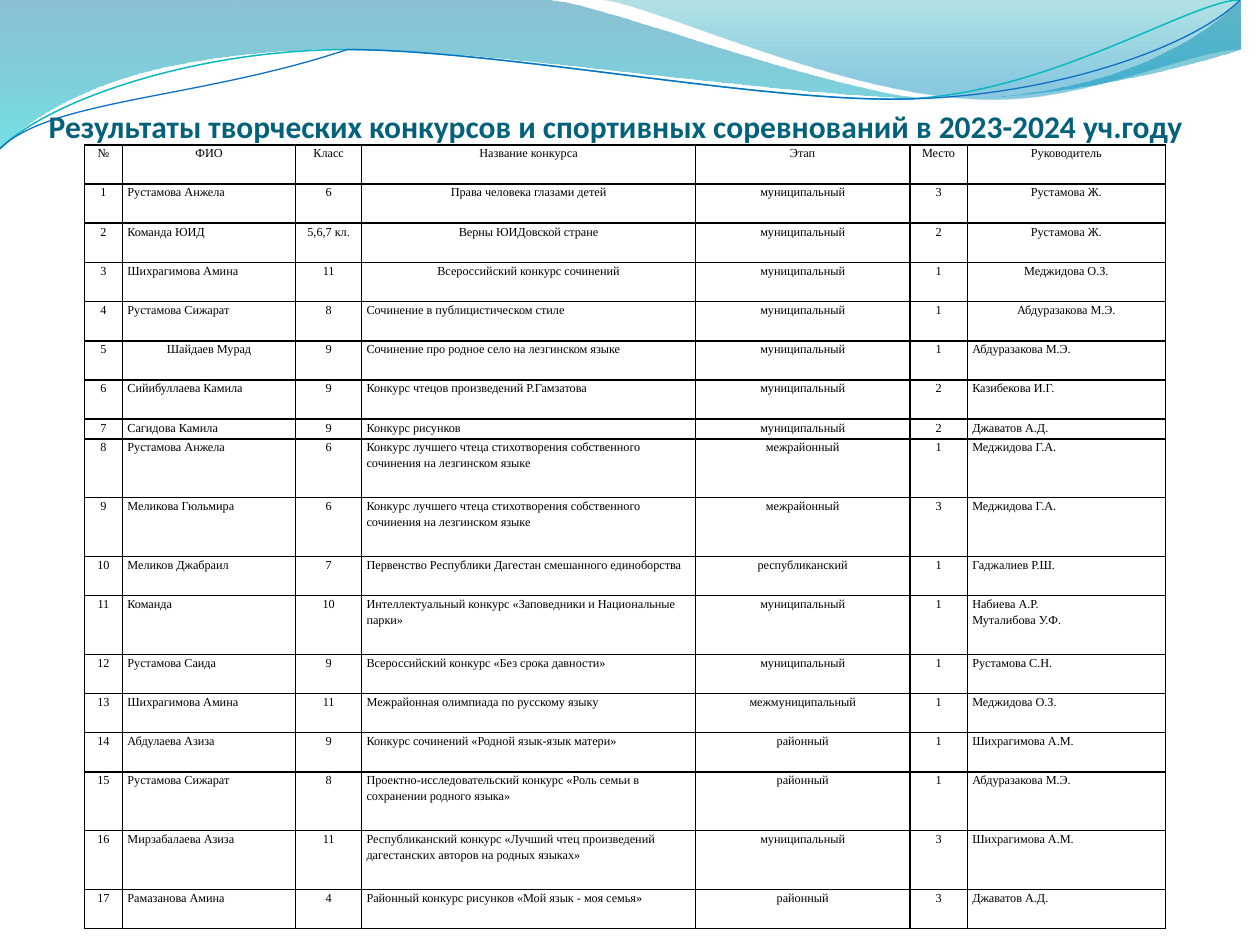
from dataclasses import dataclass
from typing import Any, NamedTuple

from lxml import etree
from pptx import Presentation
from pptx.dml.color import RGBColor
from pptx.enum.text import MSO_ANCHOR, PP_ALIGN
from pptx.oxml.ns import qn
from pptx.util import Cm, Pt

CENTER, LEFT = PP_ALIGN.CENTER, PP_ALIGN.LEFT
TOP, BOTTOM = MSO_ANCHOR.TOP, MSO_ANCHOR.BOTTOM


@dataclass(frozen=True)
class Theme:
    title_color: str = "04617B"
    text_color: str = "000000"
    upper_line: str = "0AB8BF"
    lower_line: str = "0F6FC6"
    title_font: str = "Calibri"
    table_font: str = "Times New Roman"
    title_size: float = 18
    table_size: float = 7
    border_width: float = 1


class Stop(NamedTuple):
    position: float
    color: str
    opacity: int


class Wave(NamedTuple):
    start: tuple
    segments: list
    stops: tuple = ()
    line_color: str = ""
    line_width: float = 0


class Result(NamedTuple):
    name: str
    grade: str
    contest: str
    stage: str
    place: str
    leader: str
    height: int = 2


THEME = Theme()
WAVES = [
    Wave((0, 0), [
        [(11.18, 0)],
        [(12.09, 0.43), (16.87, 1.6), (19.25, 1.6)],
        [(21.67, 1.6), (24.33, 0.66), (25.4, 0.23)],
        [(25.4, 0.91)],
        [(24.97, 1.12), (22.1, 1.93), (18.95, 1.91)],
        [(15.8, 1.91), (9.7, 0.71), (6.53, 0.86)],
        [(3.28, 0.91), (1.17, 2.11), (0, 2.87)],
    ], stops=(Stop(0, "0074A1", 45), Stop(1, "00C6CF", 55))),
    Wave((12.17, 0), [
        [(12.93, 0.28), (17.32, 1.57), (19.53, 1.65)],
        [(21.74, 1.75), (24.41, 0.81), (25.4, 0.53)],
        [(25.4, 0)],
    ], stops=(Stop(0, "00A1A9", 30), Stop(0.8, "008BBF", 45))),
    Wave((0, 2.82), [
        [(1.22, 2.36), (4.01, 1.45), (7.04, 1.32)],
        [(10.03, 1.19), (15.06, 2.26), (18.11, 2.03)],
        [(21.16, 1.8), (23.83, 0.38), (25.35, -0.05)],
    ], line_color=THEME.upper_line, line_width=0.85),
    Wave((0, 2.64), [
        [(1.19, 2.44), (4.17, 1.55), (7.19, 1.42)],
        [(10.24, 1.3), (15.16, 2.13), (18.21, 1.9)],
        [(21.23, 1.7), (23.9, 0.53), (25.4, 0.15)],
    ], line_color=THEME.lower_line, line_width=0.75),
]

TITLE = "Результаты творческих конкурсов и спортивных соревнований в 2023-2024 уч.году"
MUNICIPAL, DISTRICT, INTERDISTRICT = "муниципальный", "районный", "межрайонный"
READING = "Конкурс лучшего чтеца стихотворения собственного сочинения на лезгинском языке"
HEADER = Result("ФИО", "Класс", "Название конкурса", "Этап", "Место", "Руководитель")
RESULTS = [
    Result("Рустамова Анжела", "6", "Права человека глазами детей", MUNICIPAL, "3", "Рустамова Ж."),
    Result("Команда ЮИД", "5,6,7 кл.", "Верны ЮИДовской стране", MUNICIPAL, "2", "Рустамова Ж."),
    Result("Шихрагимова Амина", "11", "Всероссийский конкурс сочинений", MUNICIPAL, "1", "Меджидова О.З."),
    Result("Рустамова Сижарат", "8", "Сочинение в публицистическом стиле", MUNICIPAL, "1", "Абдуразакова М.Э."),
    Result("Шайдаев Мурад", "9", "Сочинение про родное село на лезгинском языке", MUNICIPAL, "1",
           "Абдуразакова М.Э."),
    Result("Сийибуллаева Камила", "9", "Конкурс чтецов произведений Р.Гамзатова", MUNICIPAL, "2",
           "Казибекова И.Г."),
    Result("Сагидова Камила", "9", "Конкурс рисунков", MUNICIPAL, "2", "Джаватов А.Д.", 1),
    Result("Рустамова Анжела", "6", READING, INTERDISTRICT, "1", "Меджидова Г.А.", 3),
    Result("Меликова Гюльмира", "6", READING, INTERDISTRICT, "3", "Меджидова Г.А.", 3),
    Result("Меликов Джабраил", "7", "Первенство Республики Дагестан смешанного единоборства",
           "республиканский", "1", "Гаджалиев Р.Ш."),
    Result("Команда", "10", "Интеллектуальный конкурс «Заповедники и Национальные парки»", MUNICIPAL, "1",
           "Набиева А.Р.\nМуталибова У.Ф.", 3),
    Result("Рустамова Саида", "9", "Всероссийский конкурс «Без срока давности»", MUNICIPAL, "1",
           "Рустамова С.Н."),
    Result("Шихрагимова Амина", "11", "Межрайонная олимпиада по русскому языку", "межмуниципальный", "1",
           "Меджидова О.З."),
    Result("Абдулаева Азиза", "9", "Конкурс сочинений «Родной язык-язык матери»", DISTRICT, "1",
           "Шихрагимова А.М."),
    Result("Рустамова Сижарат", "8",
           "Проектно-исследовательский конкурс «Роль семьи в сохранении родного языка»", DISTRICT, "1",
           "Абдуразакова М.Э.", 3),
    Result("Мирзабалаева Азиза", "11",
           "Республиканский конкурс «Лучший чтец произведений дагестанских авторов на родных языках»",
           MUNICIPAL, "3", "Шихрагимова А.М.", 3),
    Result("Рамазанова Амина", "4", "Районный конкурс рисунков «Мой язык - моя семья»", DISTRICT, "3",
           "Джаватов А.Д."),
]
COLUMN_WIDTHS = (0.77, 3.49, 1.33, 6.73, 4.32, 1.16, 3.99)
TABLE_HEIGHT = 15.8
LAST_CENTERED_ROW = (17, 0, 17, 3, 17, 17, 4)
CENTERED_NAME = (5, 1)


def apply_format(target: Any, values: dict) -> None:
    for name, value in values.items():
        setattr(target, name, value)


def format_paragraph(paragraph: Any, values: dict, font_values: dict, color: str) -> None:
    apply_format(paragraph, values)
    for run in paragraph.runs:
        apply_format(run.font, font_values)
        run.font.color.rgb = RGBColor.from_string(color)


def bend_segments(shape: Any, segments: list) -> None:
    lines = iter(list(shape._element.iter(qn("a:lnTo"))))
    for controls in segments:
        first, *others = [next(lines) for _ in controls]
        if others:
            first.tag = qn("a:cubicBezTo")
            for line in others:
                first.append(line[0])
                line.getparent().remove(line)


def draw_wave(slide: Any, wave: Wave) -> None:
    builder = slide.shapes.build_freeform(*wave.start, scale=float(Cm(1)))
    points = [point for controls in wave.segments for point in controls]
    builder.add_line_segments(points, close=bool(wave.stops))
    shape = builder.convert_to_shape()
    bend_segments(shape, wave.segments)
    shape.shadow.inherit = False
    if wave.stops:
        shape.line.fill.background()
        shape.fill.gradient()
        shape.fill.gradient_angle = 270
        for gradient_stop, stop in zip(shape.fill.gradient_stops, wave.stops):
            gradient_stop.position = stop.position
            gradient_stop.color.rgb = RGBColor.from_string(stop.color)
        for color, stop in zip(shape._element.spPr.iter(qn("a:srgbClr")), wave.stops):
            etree.SubElement(color, qn("a:alpha"), val=str(stop.opacity * 1000))
    else:
        shape.fill.background()
        shape.line.color.rgb = RGBColor.from_string(wave.line_color)
        shape.line.width = Pt(wave.line_width)


def draw_title(slide: Any) -> None:
    frame = slide.shapes.add_textbox(Cm(0.71), Cm(1.12), Cm(23.42), Cm(1.8)).text_frame
    apply_format(frame, dict(word_wrap=True, vertical_anchor=BOTTOM, margin_left=0,
                             margin_right=0, margin_top=Cm(0.13), margin_bottom=0, text=TITLE))
    format_paragraph(frame.paragraphs[0], dict(alignment=CENTER),
                     dict(name=THEME.title_font, size=Pt(THEME.title_size), bold=True),
                     THEME.title_color)


def add_borders(cell: Any) -> None:
    properties = cell._tc.get_or_add_tcPr()
    for position, side in enumerate(("a:lnL", "a:lnR", "a:lnT", "a:lnB")):
        border = etree.Element(qn(side), w=str(Pt(THEME.border_width)))
        fill = etree.SubElement(border, qn("a:solidFill"))
        etree.SubElement(fill, qn("a:srgbClr"), val=THEME.text_color)
        properties.insert(position, border)


def draw_cell(cell: Any, text: str, alignment: Any) -> None:
    apply_format(cell, dict(text=text, margin_left=Cm(0.1), margin_right=Cm(0.1),
                            margin_top=0, margin_bottom=0, vertical_anchor=TOP))
    cell.fill.background()
    add_borders(cell)
    for paragraph in cell.text_frame.paragraphs:
        format_paragraph(paragraph, dict(alignment=alignment, line_spacing=1.15),
                         dict(name=THEME.table_font, size=Pt(THEME.table_size)), THEME.text_color)


def draw_table(slide: Any) -> None:
    records = [HEADER, *RESULTS]
    table = slide.shapes.add_table(len(records), len(COLUMN_WIDTHS), Cm(1.7), Cm(2.92),
                                   Cm(sum(COLUMN_WIDTHS)), Cm(TABLE_HEIGHT)).table
    apply_format(table, dict(first_row=False, horz_banding=False))
    for column, width in zip(table.columns, COLUMN_WIDTHS):
        column.width = Cm(width)
    line_height = TABLE_HEIGHT / sum(record.height for record in records)
    for row, record in enumerate(records):
        table.rows[row].height = Cm(record.height * line_height)
        for column, text in enumerate((str(row) if row else "№", *record[:-1])):
            centered = row <= LAST_CENTERED_ROW[column] or (row, column) == CENTERED_NAME
            draw_cell(table.cell(row, column), text, CENTER if centered else LEFT)


def main() -> None:
    presentation = Presentation()
    apply_format(presentation, dict(slide_width=Cm(25.4), slide_height=Cm(19.05)))
    slide = presentation.slides.add_slide(presentation.slide_layouts[6])
    for wave in WAVES:
        draw_wave(slide, wave)
    draw_title(slide)
    draw_table(slide)
    presentation.save("out.pptx")


if __name__ == "__main__":
    main()
